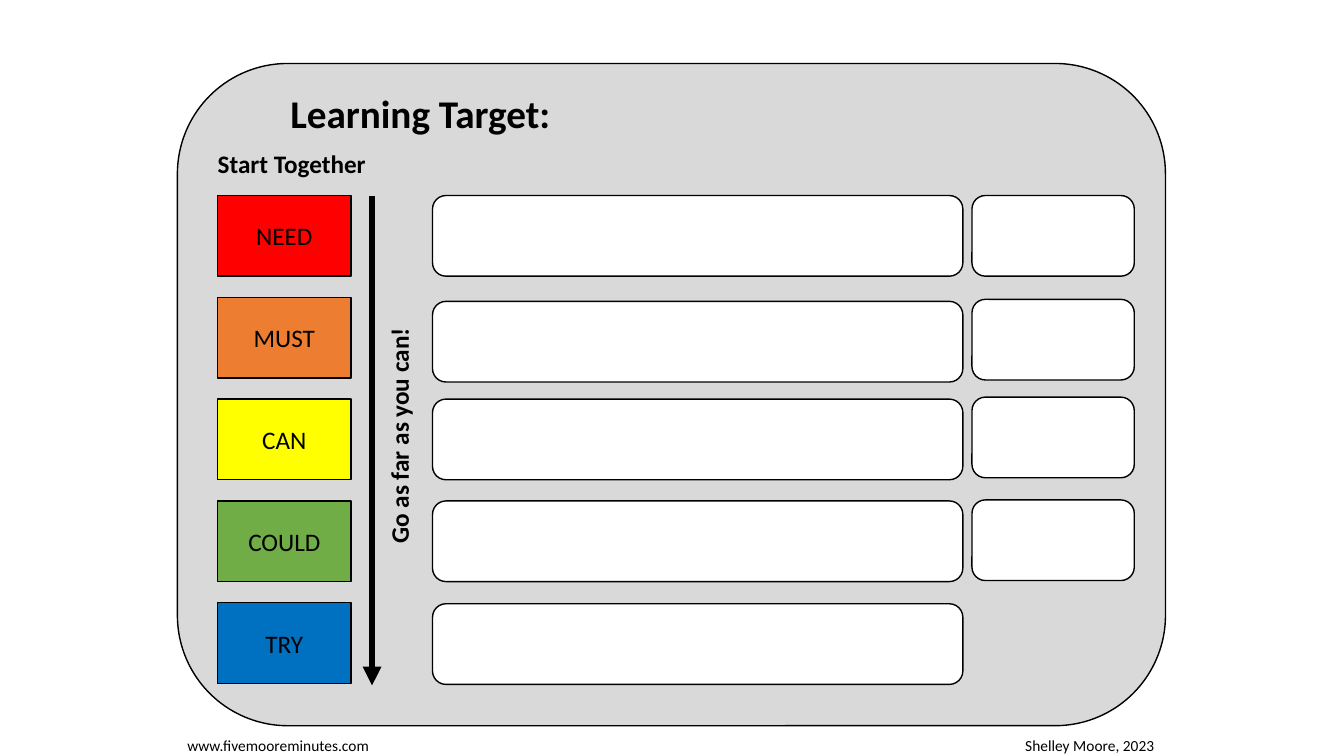
"""Build a learning target slide with five levels and blank response boxes."""
import pptx
import pptx.dml.color
import pptx.enum.shapes
import pptx.enum.text
import pptx.oxml
import pptx.oxml.ns
import pptx.util
from pptx.util import Inches

COLOURS = {
    "black": "000000", "white": "FFFFFF", "panel": "D9D9D9",
    "red": "FF0000", "orange": "ED7D31", "yellow": "FFFF00",
    "green": "70AD47", "blue": "0070C0",
}
TITLE = "Learning Target:"
LEVELS = [("NEED", "red"), ("MUST", "orange"), ("CAN", "yellow"),
          ("COULD", "green"), ("TRY", "blue")]
HEADINGS = [
    ("Start Together", (2.06, 1.46, 2.25, 0.6), 0),
    ("Go as far as you can!", (2.74, 3.84, 2.7, 0.6), 270),
]
FOOTERS = [
    ("www.fivemooreminutes.com", (1.76, 7.25, 2.03, 0.29)),
    ("Shelley Moore, 2023", (10.07, 7.25, 1.5, 0.29)),
]
RESPONSE_COLUMNS = [
    (4.29, 5.26, [1.94, 2.99, 3.96, 4.97, 5.99]),
    (9.64, 1.61, [1.94, 2.97, 3.94, 4.96]),
]
PANEL = (1.76, 0.63, 9.8, 6.57)
FIRST_TOP, ROW_PITCH, ROW_HEIGHT = 1.94, 1.01, 0.8
LEVEL_LEFT, LEVEL_WIDTH = 2.16, 1.32
ARROW_LEFT, ARROW_END = 3.69, 6.8

RECTANGLE = pptx.enum.shapes.MSO_SHAPE.RECTANGLE
ROUNDED = pptx.enum.shapes.MSO_SHAPE.ROUNDED_RECTANGLE
ALIGN = pptx.enum.text.PP_ALIGN
ANCHOR = pptx.enum.text.MSO_ANCHOR


def colour(name):
    """Return a named colour."""
    return pptx.dml.color.RGBColor.from_string(COLOURS[name])


def write(box, text, size=18, bold=False, align=ALIGN.LEFT,
          anchor=ANCHOR.TOP, wrap=True, spacing=None):
    """Put formatted text in a box."""
    frame = box.text_frame
    frame.auto_size = pptx.enum.text.MSO_AUTO_SIZE.NONE
    frame.word_wrap = wrap
    frame.vertical_anchor = anchor
    para = frame.paragraphs[0]
    para.alignment = align
    para.line_spacing = spacing
    span = para.add_run()
    span.text = text
    span.font.name = "Calibri"
    span.font.size = pptx.util.Pt(size)
    span.font.bold = bold
    span.font.color.rgb = colour("black")


def add_box(page, kind, place, fill):
    """Add a filled, outlined shape."""
    box = page.shapes.add_shape(kind, *map(Inches, place))
    box.shadow.inherit = False
    box.fill.solid()
    box.fill.fore_color.rgb = colour(fill)
    box.line.color.rgb = colour("black")
    box.line.width = pptx.util.Pt(1)
    return box


def add_arrow(page):
    """Add the downward arrow beside the levels."""
    arrow = page.shapes.add_connector(
        pptx.enum.shapes.MSO_CONNECTOR.STRAIGHT,
        Inches(ARROW_LEFT), Inches(FIRST_TOP),
        Inches(ARROW_LEFT), Inches(ARROW_END))
    arrow.line.color.rgb = colour("black")
    arrow.line.width = pptx.util.Pt(4.5)
    head = pptx.oxml.parse_xml(
        f'<a:tailEnd {pptx.oxml.ns.nsdecls("a")} type="triangle"/>')
    arrow.line._get_or_add_ln().append(head)
    effects = pptx.oxml.parse_xml(f'<a:effectLst {pptx.oxml.ns.nsdecls("a")}/>')
    arrow.element.spPr.append(effects)


def main():
    """Build and save the deck."""
    deck = pptx.Presentation()
    deck.slide_width, deck.slide_height = Inches(13.33), Inches(7.5)
    page = deck.slides.add_slide(deck.slide_layouts[5])

    panel = add_box(page, ROUNDED, PANEL, "panel")
    title = page.shapes.title
    title.left, title.top = Inches(2.78), Inches(0.89)
    title.width, title.height = Inches(9.39), Inches(0.6)
    write(title, TITLE, size=28, bold=True, spacing=0.9)
    panel.element.addnext(title.element)

    for text, place in FOOTERS:
        box = page.shapes.add_textbox(*map(Inches, place))
        write(box, text, size=11, wrap=False)

    for row, (text, fill) in enumerate(LEVELS):
        place = (LEVEL_LEFT, FIRST_TOP + row * ROW_PITCH, LEVEL_WIDTH, ROW_HEIGHT)
        box = add_box(page, RECTANGLE, place, fill)
        write(box, text, align=ALIGN.CENTER, anchor=ANCHOR.MIDDLE)

    add_arrow(page)
    for text, place, rotation in HEADINGS:
        box = page.shapes.add_textbox(*map(Inches, place))
        box.rotation = rotation
        write(box, text, bold=True, spacing=0.9)

    for left, width, tops in RESPONSE_COLUMNS:
        for top in tops:
            add_box(page, ROUNDED, (left, top, width, ROW_HEIGHT), "white")

    deck.save("out.pptx")


if __name__ == "__main__":
    main()
